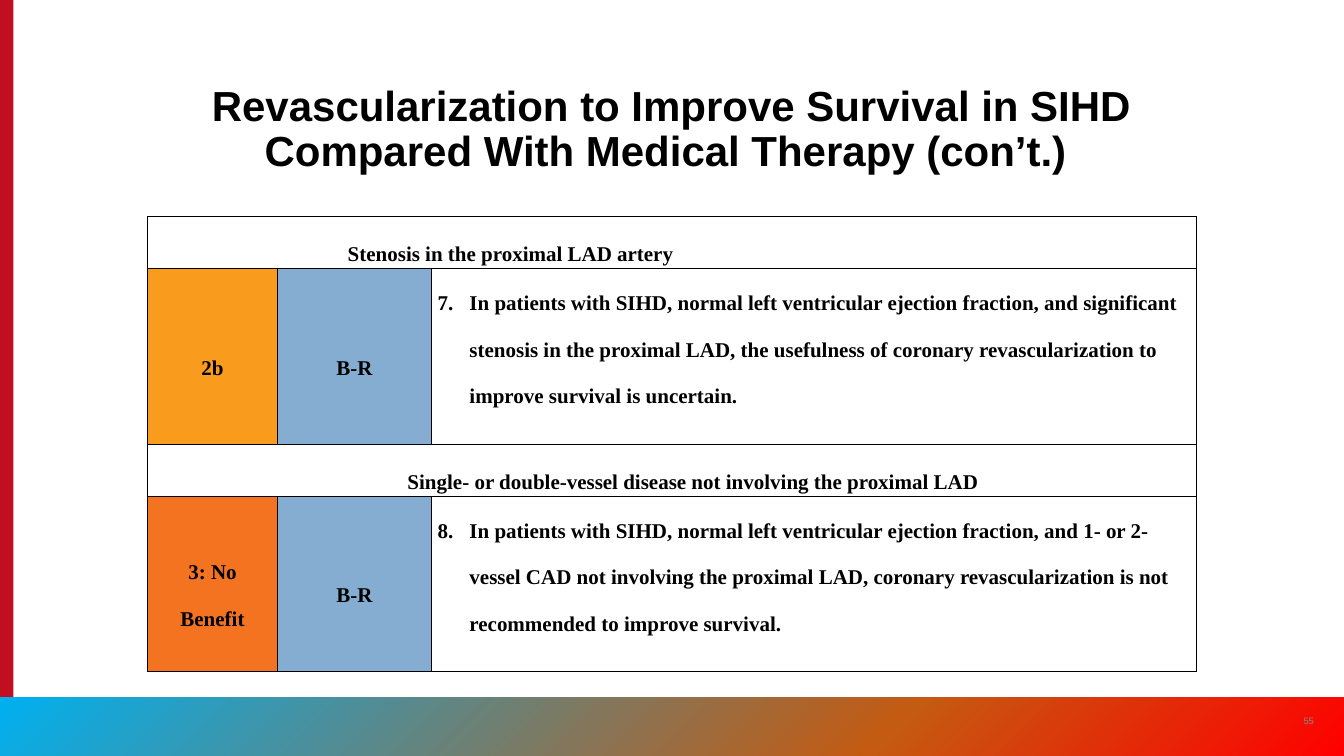
from dataclasses import dataclass

from copy import deepcopy
from lxml.etree import SubElement
from pptx import Presentation
from pptx.dml.color import RGBColor
from pptx.enum.shapes import MSO_SHAPE as Shape
from pptx.enum.text import MSO_ANCHOR as Anchor, PP_ALIGN as Align
from pptx.oxml.ns import qn
from pptx.util import Inches, Pt

BLACK = RGBColor(0x00, 0x00, 0x00)
WHITE = RGBColor(0xFF, 0xFF, 0xFF)
GREY = RGBColor(0x8A, 0x8B, 0x8A)
CRIMSON = RGBColor(0xC1, 0x0E, 0x21)
SKY = RGBColor(0x00, 0xB0, 0xF0)
RUST = RGBColor(0xC5, 0x5A, 0x11)
RED = RGBColor(0xFF, 0x00, 0x00)
AMBER = RGBColor(0xF9, 0x9B, 0x1C)
ORANGE = RGBColor(0xF3, 0x73, 0x21)
STEEL = RGBColor(0x85, 0xAD, 0xD1)

COLUMN_WIDTHS = (1.54, 1.84, 9.1)
HEADING_HEIGHT, ADVICE_HEIGHT = 0.62, 2.09


@dataclass
class Recommendation:
    heading: str
    heading_align: Align
    heading_indent: float
    strength: str
    strength_color: RGBColor
    evidence: str
    number: int
    advice: str


RECOMMENDATIONS = [
    Recommendation(
        "Stenosis in the proximal LAD artery", Align.LEFT, 2.31,
        "2b", AMBER, "B-R", 7,
        "In patients with SIHD, normal left ventricular ejection fraction, and "
        "significant stenosis in the proximal LAD, the usefulness of coronary "
        "revascularization to improve survival is uncertain."),
    Recommendation(
        "Single- or double-vessel disease not involving the proximal LAD",
        Align.CENTER, 0.5,
        "3: No Benefit", ORANGE, "B-R", 8,
        "In patients with SIHD, normal left ventricular ejection fraction, and "
        "1- or 2-vessel CAD not involving the proximal LAD, coronary "
        "revascularization is not recommended to improve survival."),
]


def format_text(p, font: str, size: float, color: RGBColor, bold: bool, align: Align) -> None:
    p.alignment = align
    for r in p.runs:
        r.font.name = font
        r.font.size = Pt(size)
        r.font.bold = bold
        r.font.color.rgb = color


def add_block(slide, left: float, top: float, width: float, height: float):
    sp = slide.shapes.add_shape(
        Shape.RECTANGLE, Inches(left), Inches(top), Inches(width), Inches(height))
    sp.shadow.inherit = False
    sp.line.fill.background()
    return sp


def add_decoration(slide) -> None:
    stripe = add_block(slide, 0, 0, 0.16, 9)
    stripe.fill.solid()
    stripe.fill.fore_color.rgb = CRIMSON

    band = add_block(slide, 0, 8.3, 16, 0.7)
    band.fill.gradient()
    band.fill.gradient_angle = 315
    stops = band._element.spPr.find(".//" + qn("a:gsLst"))
    stops.append(deepcopy(stops[-1]))
    colors = ((0, SKY), (0.66, RUST), (1, RED))
    for stop, (position, color) in zip(band.fill.gradient_stops, colors):
        stop.position = position
        stop.color.rgb = color


def add_title(slide) -> None:
    title = slide.shapes.title
    title.left, title.top = Inches(2.1), Inches(0.97)
    title.width, title.height = Inches(11.79), Inches(1.17)
    tf = title.text_frame
    tf.text = ("Revascularization to Improve Survival in SIHD "
               "Compared With Medical Therapy (con’t.) ")
    tf.word_wrap = True
    tf.vertical_anchor = Anchor.BOTTOM
    p = tf.paragraphs[0]
    p.line_spacing = 0.9
    format_text(p, "Arial", 36, BLACK, True, Align.CENTER)


def add_page_number(slide) -> None:
    box = slide.shapes.add_textbox(Inches(15.34), Inches(8.34), Inches(0.48), Inches(0.48))
    tf = box.text_frame
    tf.text = "55"
    tf.word_wrap = True
    tf.vertical_anchor = Anchor.MIDDLE
    format_text(tf.paragraphs[0], "Arial", 8, GREY, False, Align.CENTER)


def set_borders(cell) -> None:
    tc_pr = cell._tc.get_or_add_tcPr()
    for side in ("lnL", "lnR", "lnT", "lnB"):
        line = SubElement(tc_pr, qn(f"a:{side}"), w=str(Pt(1)))
        fill = SubElement(line, qn("a:solidFill"))
        SubElement(fill, qn("a:srgbClr"), val=str(BLACK))


def set_indent(p, left: float, first: float = 0) -> None:
    p_pr = p._p.get_or_add_pPr()
    p_pr.set("marL", str(Inches(left)))
    p_pr.set("indent", str(Inches(first)))


def set_number(p, start: int) -> None:
    p_pr = p._p.get_or_add_pPr()
    color = SubElement(p_pr, qn("a:buClr"))
    SubElement(color, qn("a:srgbClr"), val=str(BLACK))
    SubElement(p_pr, qn("a:buFont"), typeface="+mj-lt")
    SubElement(p_pr, qn("a:buAutoNum"), type="arabicPeriod", startAt=str(start))


def fill_cell(cell, text: str, color: RGBColor = WHITE,
              align: Align = Align.CENTER, anchor: Anchor = Anchor.MIDDLE):
    cell.fill.solid()
    cell.fill.fore_color.rgb = color
    cell.vertical_anchor = anchor
    cell.margin_left = cell.margin_right = Inches(0.07)
    cell.margin_top = cell.margin_bottom = 0
    cell.text_frame.text = text
    p = cell.text_frame.paragraphs[0]
    p.line_spacing = 2.0
    format_text(p, "Times New Roman", 18, BLACK, True, align)
    return p


def add_recommendations(slide) -> None:
    rows = 2 * len(RECOMMENDATIONS)
    height = len(RECOMMENDATIONS) * (HEADING_HEIGHT + ADVICE_HEIGHT)
    table = slide.shapes.add_table(
        rows, len(COLUMN_WIDTHS), Inches(1.76), Inches(2.58),
        Inches(sum(COLUMN_WIDTHS)), Inches(height)).table
    table.first_row = table.horz_banding = False
    for column, width in zip(table.columns, COLUMN_WIDTHS):
        column.width = Inches(width)
    for cell in table.iter_cells():
        set_borders(cell)

    for i, item in enumerate(RECOMMENDATIONS):
        top, body = 2 * i, 2 * i + 1
        table.rows[top].height = Inches(HEADING_HEIGHT)
        table.rows[body].height = Inches(ADVICE_HEIGHT)

        heading = table.cell(top, 0)
        heading.merge(table.cell(top, len(COLUMN_WIDTHS) - 1))
        p = fill_cell(heading, item.heading, align=item.heading_align)
        set_indent(p, item.heading_indent)

        fill_cell(table.cell(body, 0), item.strength, item.strength_color)
        fill_cell(table.cell(body, 1), item.evidence, STEEL)
        p = fill_cell(table.cell(body, 2), item.advice,
                      align=Align.LEFT, anchor=Anchor.TOP)
        set_indent(p, 0.38, -0.38)
        set_number(p, item.number)


def main() -> None:
    prs = Presentation()
    prs.slide_width, prs.slide_height = Inches(16), Inches(9)
    slide = prs.slides.add_slide(prs.slide_layouts[5])
    add_decoration(slide)
    add_page_number(slide)
    add_title(slide)
    add_recommendations(slide)
    prs.save("out.pptx")


if __name__ == "__main__":
    main()
